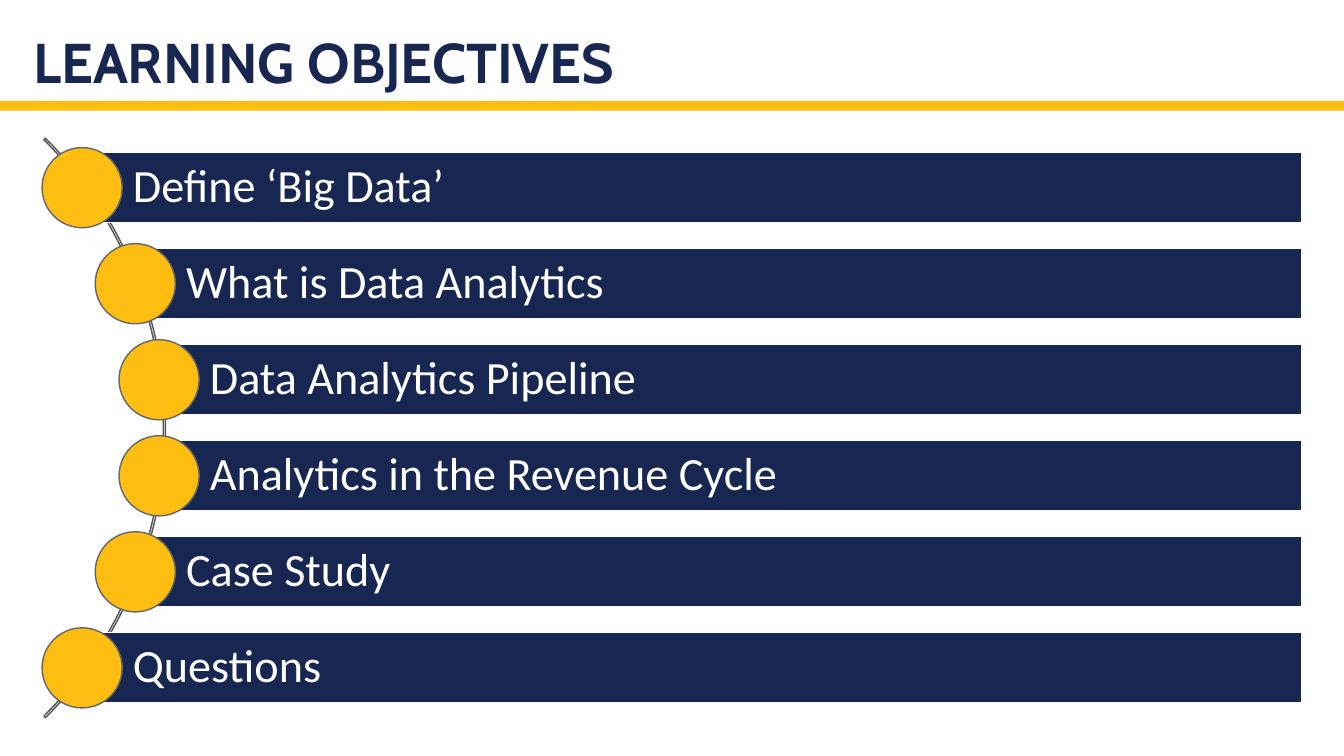
from pptx import Presentation
from pptx.dml.color import RGBColor
from pptx.enum.shapes import MSO_SHAPE as Shape
from pptx.enum.text import MSO_ANCHOR as Anchor, PP_ALIGN as Align
from pptx.util import Cm, Pt

COLORS = {
    "navy": "182751",
    "gold": "FEBD11",
    "white": "FFFFFF",
    "arc": "515255",
    "rim": "65666A",
}
TITLE_FONT = {"name": "Cabin", "size": Pt(40), "bold": True}
BAR_FONT = {"name": "Calibri", "size": Pt(33), "bold": False}

# Each objective with the centre of its dot, which is the left edge of its bar
OBJECTIVES = [
    ("Define ‘Big Data’", 2.07),
    ("What is Data Analytics", 3.41),
    ("Data Analytics Pipeline", 4.01),
    ("Analytics in the Revenue Cycle", 4.01),
    ("Case Study", 3.41),
    ("Questions", 2.07),
]
FIRST_MIDDLE = 4.73
PITCH = 2.42
BAR_RIGHT = 32.81
BAR_HEIGHT = 1.77
DOT_SIZE = 2.02


def rgb(color):
    return RGBColor.from_string(COLORS[color])


def add_figure(slide, kind, box, fill=None, line=None):
    shape = slide.shapes.add_shape(kind, *[Cm(length) for length in box])
    shape.shadow.inherit = False
    if fill:
        shape.fill.solid()
        shape.fill.fore_color.rgb = rgb(fill)
    else:
        shape.fill.background()
    if line:
        shape.line.color.rgb = rgb(line)
        shape.line.width = Pt(1)
    else:
        shape.line.fill.background()
    return shape


def write_text(shape, text, font, color, anchor, insets):
    frame = shape.text_frame
    frame.word_wrap = True
    frame.vertical_anchor = anchor
    for side, inset in zip(("left", "top", "right", "bottom"), insets):
        setattr(frame, f"margin_{side}", Cm(inset))
    paragraph = frame.paragraphs[0]
    paragraph.alignment = Align.LEFT
    paragraph.line_spacing = 0.9
    run = paragraph.add_run()
    run.text = text
    for name, value in font.items():
        setattr(run.font, name, value)
    run.font.color.rgb = rgb(color)


def add_title(slide, text):
    box = slide.shapes.add_textbox(Cm(0.84), Cm(0), Cm(32.18), Cm(2.54))
    write_text(box, text, TITLE_FONT, "navy", Anchor.BOTTOM, (0, 0.13, 0, 0.13))


def add_arc(slide):
    arc = add_figure(slide, Shape.BLOCK_ARC, (-16.48, 0.46, 20.65, 20.65), line="arc")
    for index, value in enumerate((189, 27, 0.0027)):
        arc.adjustments[index] = value


def add_objective(slide, text, left, middle):
    bar_box = (left, middle - BAR_HEIGHT / 2, BAR_RIGHT - left, BAR_HEIGHT)
    bar = add_figure(slide, Shape.RECTANGLE, bar_box, "navy", "white")
    write_text(bar, text, BAR_FONT, "white", Anchor.MIDDLE, (1.28, 0.23, 0.23, 0.23))
    radius = DOT_SIZE / 2
    dot_box = (left - radius, middle - radius, DOT_SIZE, DOT_SIZE)
    add_figure(slide, Shape.OVAL, dot_box, "gold", "rim")


def main():
    presentation = Presentation()
    presentation.slide_width = Cm(33.87)
    presentation.slide_height = Cm(19.05)
    slide = presentation.slides.add_slide(presentation.slide_layouts[6])

    # Heading and gold rule
    add_figure(slide, Shape.RECTANGLE, (0, 2.54, 33.87, 0.25), "gold")
    add_title(slide, "LEARNING OBJECTIVES")

    # Objectives strung along the arc
    add_arc(slide)
    for row, (text, left) in enumerate(OBJECTIVES):
        add_objective(slide, text, left, FIRST_MIDDLE + row * PITCH)

    presentation.save("out.pptx")


if __name__ == "__main__":
    main()
